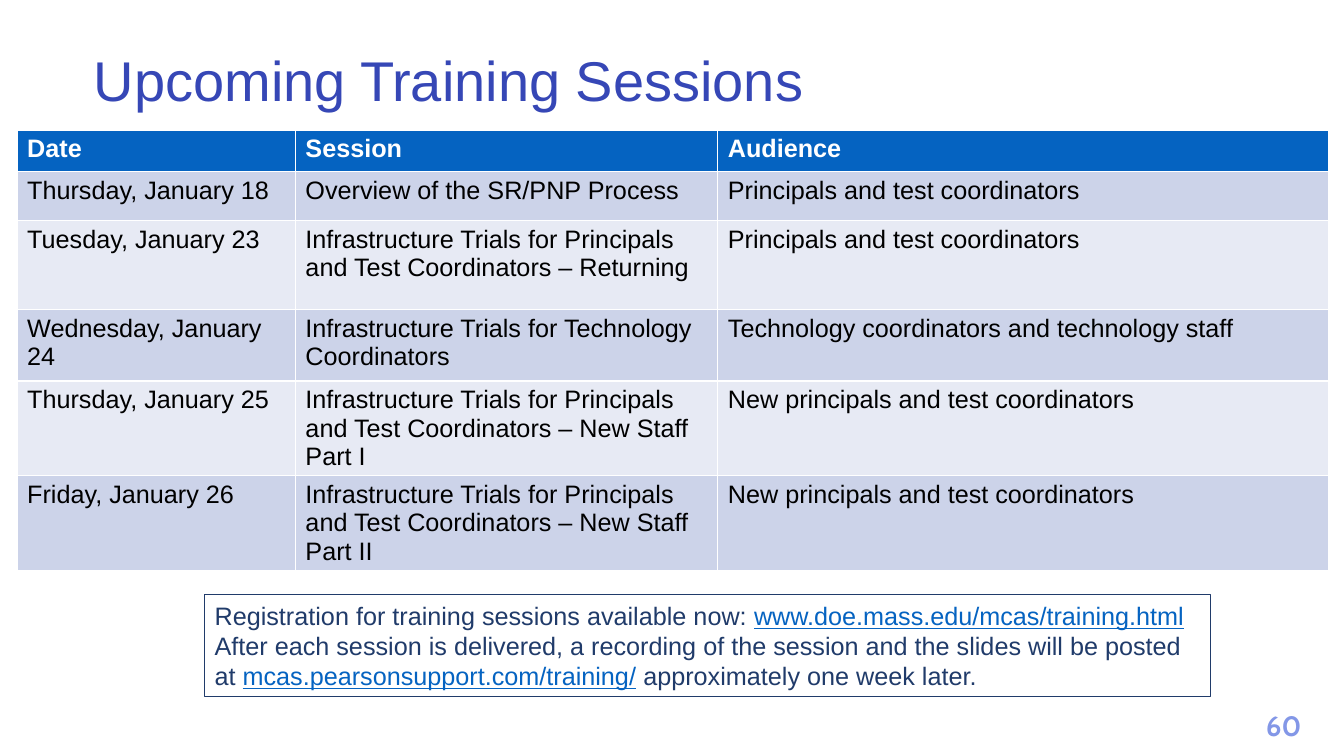
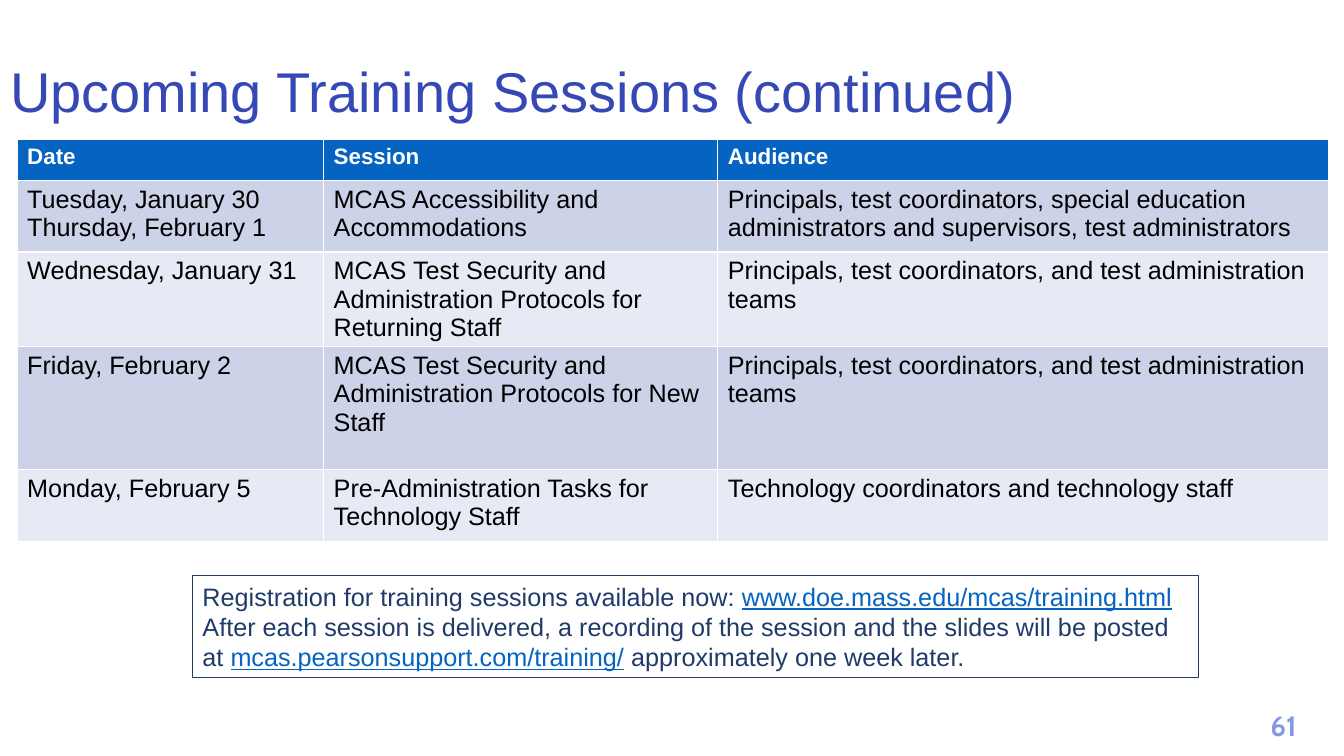
from pptx import Presentation
from pptx.dml.color import RGBColor
from pptx.enum.shapes import MSO_SHAPE
from pptx.enum.text import MSO_ANCHOR, PP_ALIGN
from pptx.util import Inches, Pt

RECTANGLE = MSO_SHAPE.RECTANGLE
MIDDLE = MSO_ANCHOR.MIDDLE
LEFT, CENTER = PP_ALIGN.LEFT, PP_ALIGN.CENTER
TITLE_ONLY = 5

COLORS = {
    "white": "FFFFFF", "black": "000000", "title": "3647B6", "blue": "0563C1",
    "navy": "203B6A", "number": "8397E7", "band_dark": "CCD3E9", "band_light": "E7EAF4",
}

# Text formats: color is a key of COLORS, the rest are font attributes
TITLE = {"name": "Arial", "size": Pt(40), "color": "title"}
CELL = {"name": "Arial", "size": Pt(18), "bold": False, "color": "black"}
HEADER = {**CELL, "bold": True, "color": "white"}
NOTE = {"name": "Arial", "size": Pt(18), "color": "navy"}
LINK = {**NOTE, "underline": True, "color": "blue"}
NUMBER = {"name": "Cabin", "size": Pt(20), "bold": True, "color": "number"}

# Shared geometry, in inches
SLIDE_SIZE = (13.33, 7.5)
TABLE_LEFT, TABLE_WIDTH, AUDIENCE_WIDTH = 0.17, 13.01, 6.06
NOTE_SIZE = (9.98, 1.01)
NUMBER_AREA = (12.42, 6.98, 0.62, 0.44)

COLUMN_NAMES = ("Date", "Session", "Audience")
NOTE_LINES = [
    [("Registration for training sessions available now: ", NOTE),
     ("www.doe.mass.edu/mcas/training.html", LINK)],
    [("After each session is delivered, a recording of the session and the slides "
      "will be posted at ", NOTE),
     ("mcas.pearsonsupport.com/training/", LINK),
     (" approximately one week later.", NOTE)],
]

TRIALS = "Infrastructure Trials for "
STAFF_TRIALS = TRIALS + "Principals and Test Coordinators – "
SECURITY = "MCAS Test Security and Administration Protocols for "
PRINCIPALS = "Principals and test coordinators"
NEW_PRINCIPALS = "New principals and test coordinators"
TEAMS = "Principals, test coordinators, and test administration teams"
TECHNOLOGY = "Technology coordinators and technology staff"

SLIDES = [
    {
        "number": 60,
        "title": "Upcoming Training Sessions",
        "title_area": (0.83, 0.26, 11.5, 1.14),
        "table_top": 1.29,
        "date_width": 2.76,
        "row_heights": (0.41, 0.49, 0.88, 0.71, 0.94, 0.94),
        "header_size": 18,
        "note_at": (2.03, 5.9),
        "sessions": [
            ("Thursday, January 18", "Overview of the SR/PNP Process", PRINCIPALS),
            ("Tuesday, January 23", STAFF_TRIALS + "Returning", PRINCIPALS),
            ("Wednesday, January 24", TRIALS + "Technology Coordinators", TECHNOLOGY),
            ("Thursday, January 25", STAFF_TRIALS + "New Staff Part I", NEW_PRINCIPALS),
            ("Friday, January 26", STAFF_TRIALS + "New Staff Part II", NEW_PRINCIPALS),
        ],
    },
    {
        "number": 61,
        "title": "Upcoming Training Sessions (continued)",
        "title_area": (0, 0.2, 12.53, 1.48),
        "table_top": 1.38,
        "date_width": 3.04,
        "row_heights": (0.41, 0.71, 0.94, 1.22, 0.71),
        "header_size": 16,
        "note_at": (1.91, 5.71),
        "sessions": [
            ("Tuesday, January 30\nThursday, February 1",
             "MCAS Accessibility and Accommodations",
             "Principals, test coordinators, special education administrators "
             "and supervisors, test administrators"),
            ("Wednesday, January 31", SECURITY + "Returning Staff", TEAMS),
            ("Friday, February 2", SECURITY + "New Staff", TEAMS),
            ("Monday, February 5", "Pre-Administration Tasks for Technology Staff", TECHNOLOGY),
        ],
    },
]


def color(name):
    return RGBColor.from_string(COLORS[name])


def inches(values):
    return [Inches(value) for value in values]


def fill_with(target, name):
    target.fill.solid()
    target.fill.fore_color.rgb = color(name)


def write(frame, lines, align=LEFT):
    """Fill a text frame; each line is a list of (text, format) spans."""
    frame.word_wrap = True
    for index, line in enumerate(lines):
        para = frame.paragraphs[0] if index == 0 else frame.add_paragraph()
        para.alignment = align
        for text, style in line:
            span = para.add_run()
            span.text = text
            for key, value in style.items():
                if key == "color":
                    span.font.color.rgb = color(value)
                else:
                    setattr(span.font, key, value)


def add_title(page, text, area):
    title = page.shapes.title
    title.left, title.top, title.width, title.height = inches(area)
    write(title.text_frame, [[(text, TITLE)]])
    title.text_frame.vertical_anchor = MIDDLE
    title.text_frame.paragraphs[0].line_spacing = 0.9


def add_schedule(page, content):
    rows = [COLUMN_NAMES, *content["sessions"]]
    heights = content["row_heights"]
    session_width = TABLE_WIDTH - AUDIENCE_WIDTH - content["date_width"]
    widths = (content["date_width"], session_width, AUDIENCE_WIDTH)
    area = inches((TABLE_LEFT, content["table_top"], TABLE_WIDTH, sum(heights)))
    table = page.shapes.add_table(len(rows), len(widths), *area).table
    for column, width in zip(table.columns, inches(widths)):
        column.width = width
    for row, height in zip(table.rows, inches(heights)):
        row.height = height

    header = {**HEADER, "size": Pt(content["header_size"])}
    for index, texts in enumerate(rows):
        band = "band_dark" if index % 2 else "band_light"
        background, style = (band, CELL) if index else ("blue", header)
        for cell, text in zip(table.rows[index].cells, texts):
            fill_with(cell, background)
            write(cell.text_frame, [[(line, style)] for line in text.split("\n")])


def add_note(page, position):
    box = page.shapes.add_shape(RECTANGLE, *inches(position + NOTE_SIZE))
    box.shadow.inherit = False
    fill_with(box, "white")
    box.line.color.rgb = color("navy")
    box.line.width = Pt(0.75)
    write(box.text_frame, NOTE_LINES)
    box.text_frame.vertical_anchor = MIDDLE


def add_number(page, number):
    box = page.shapes.add_textbox(*inches(NUMBER_AREA))
    write(box.text_frame, [[(str(number), NUMBER)]], CENTER)


def main():
    deck = Presentation()
    deck.slide_width, deck.slide_height = inches(SLIDE_SIZE)
    for content in SLIDES:
        page = deck.slides.add_slide(deck.slide_layouts[TITLE_ONLY])
        add_title(page, content["title"], content["title_area"])
        add_schedule(page, content)
        add_note(page, content["note_at"])
        add_number(page, content["number"])
    deck.save("out.pptx")


if __name__ == "__main__":
    main()
